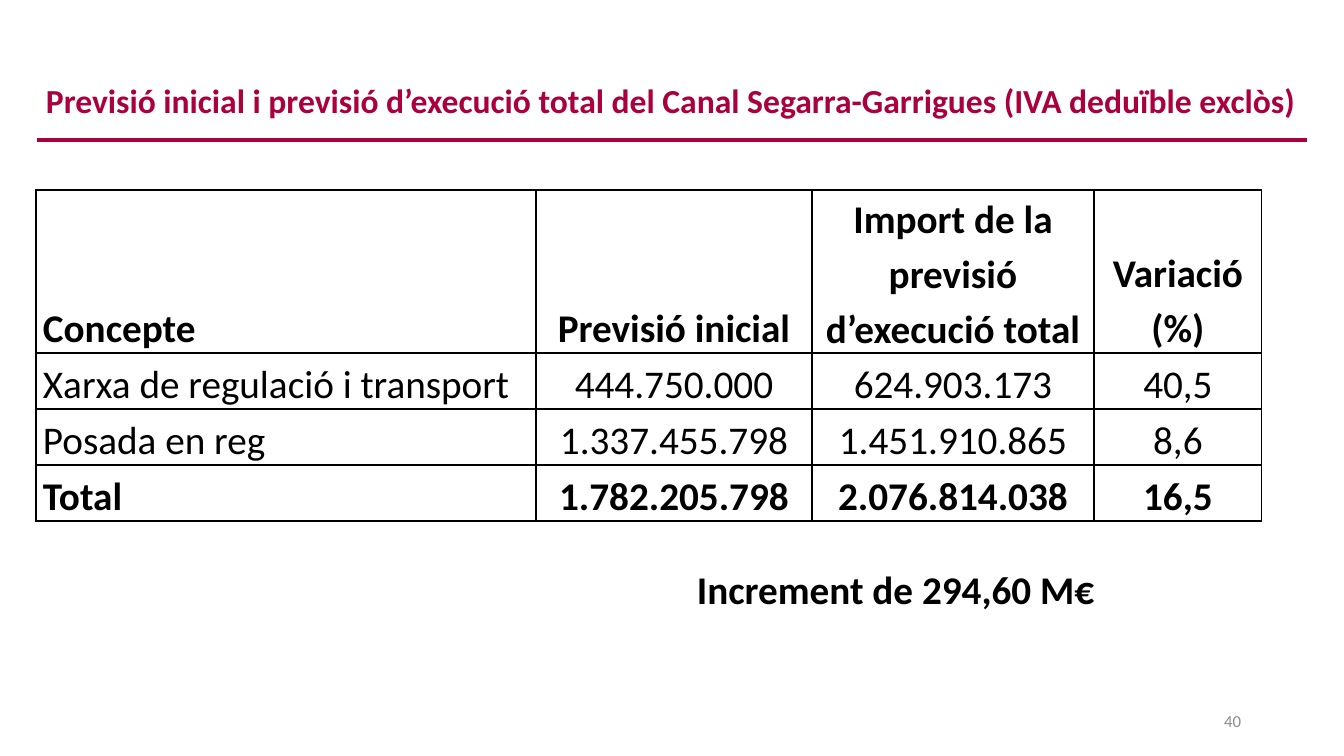
from lxml.etree import SubElement
from pptx import Presentation
from pptx.dml.color import RGBColor
from pptx.enum.shapes import MSO_CONNECTOR
from pptx.enum.text import MSO_ANCHOR as ANCHOR, PP_ALIGN as ALIGN
from pptx.oxml.ns import qn
from pptx.util import Emu, Pt

RED, BLACK, GREY = "AB003E", "000000", "8C8C8C"


def color(code):
    return RGBColor.from_string(code)


def px(count):
    return Emu(round(count * 914400 / 100.8))


class SlideBuilder:
    font_name = "Calibri"

    def __init__(self, deck):
        self.page = deck.slides.add_slide(deck.slide_layouts[6])

    def set_text(self, frame, words, size, ink, bold=False, align=ALIGN.LEFT, spacing=None):
        frame.word_wrap = True
        para = frame.paragraphs[0]
        para.text = words
        para.alignment = align
        para.line_spacing = spacing
        font = para.font
        font.name, font.size, font.bold = self.font_name, Pt(size), bold
        font.color.rgb = color(ink)

    def text(self, left, top, width, height, words, size, ink, anchor=ANCHOR.TOP, **style):
        box = self.page.shapes.add_textbox(px(left), px(top), px(width), px(height))
        box.text_frame.vertical_anchor = anchor
        self.set_text(box.text_frame, words, size, ink, **style)

    def rule(self, left, right, y, ink, weight):
        line = self.page.shapes.add_connector(
            MSO_CONNECTOR.STRAIGHT, px(left), px(y), px(right), px(y))
        line.line.color.rgb = color(ink)
        line.line.width = Pt(weight)
        SubElement(line._element.spPr, qn("a:effectLst"))

    def border(self, cell, ink, weight):
        properties = cell._tc.get_or_add_tcPr()
        for position, side in enumerate(("a:lnL", "a:lnR", "a:lnT", "a:lnB")):
            edge = properties.makeelement(qn(side), {"w": str(Pt(weight))})
            fill = SubElement(edge, qn("a:solidFill"))
            SubElement(fill, qn("a:srgbClr"), val=ink)
            properties.insert(position, edge)

    def table(self, left, top, widths, heights, rows, size, bold_rows):
        grid = self.page.shapes.add_table(
            len(rows), len(widths), px(left), px(top), px(sum(widths)), px(sum(heights))).table
        grid.first_row = grid.horz_banding = False
        for column, width in zip(grid.columns, widths):
            column.width = px(width)
        for r, (height, values) in enumerate(zip(heights, rows)):
            grid.rows[r].height = px(height)
            for c, words in enumerate(values):
                cell = grid.cell(r, c)
                cell.margin_left = cell.margin_right = px(7)
                cell.margin_top = cell.margin_bottom = 0
                cell.vertical_anchor = ANCHOR.BOTTOM
                cell.fill.background()
                self.border(cell, BLACK, 1)
                self.set_text(cell.text_frame, words, size, BLACK, bold=r in bold_rows,
                              align=ALIGN.CENTER if c else ALIGN.LEFT, spacing=1.14)


def main():
    deck = Presentation()
    deck.slide_width, deck.slide_height = px(1344), px(756)
    slide = SlideBuilder(deck)

    # Title and rule
    slide.rule(37, 1307, 140, RED, 2.25)
    slide.text(36, 70, 1271, 65,
               "Previsió inicial i previsió d’execució total del Canal Segarra-Garrigues "
               "(IVA deduïble exclòs)",
               24, RED, anchor=ANCHOR.MIDDLE, bold=True, spacing=0.9)

    # Forecast table
    rows = [
        ("Concepte", "Previsió inicial", "Import de la previsió d’execució total", "Variació (%)"),
        ("Xarxa de regulació i transport", "444.750.000", "624.903.173", "40,5"),
        ("Posada en reg", "1.337.455.798", "1.451.910.865", "8,6"),
        ("Total", "1.782.205.798", "2.076.814.038", "16,5"),
    ]
    slide.table(36, 190, (500, 276, 282, 168), (163, 56, 56, 56), rows, 28, bold_rows=(0, 3))

    # Conclusion and page number
    slide.text(687, 560, 434, 57, "Increment de 294,60 M€", 28, BLACK, bold=True)
    slide.text(949, 701, 302, 40, "40", 12, GREY, anchor=ANCHOR.MIDDLE, align=ALIGN.RIGHT)

    deck.save("out.pptx")


if __name__ == "__main__":
    main()
